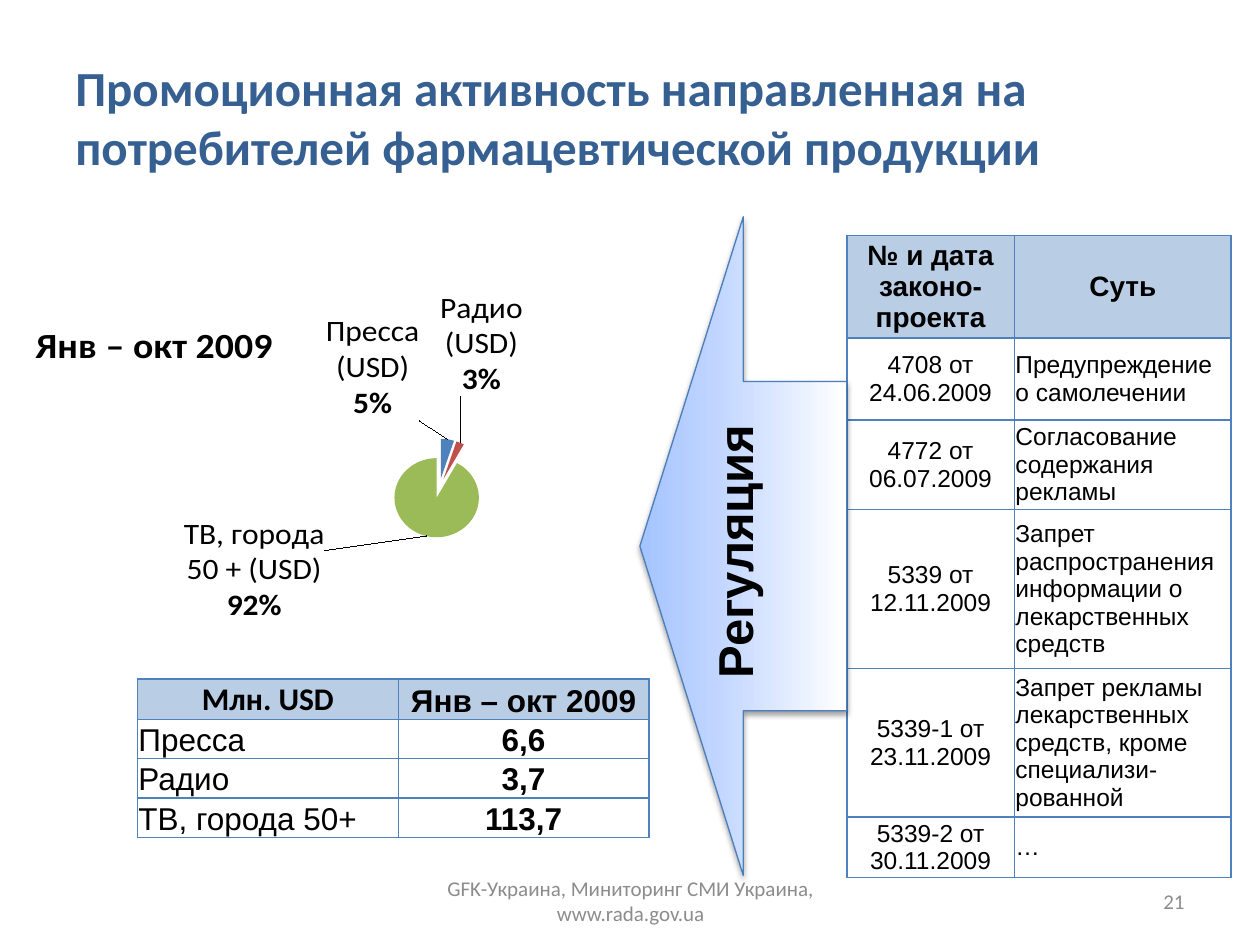
from dataclasses import dataclass

from lxml import etree
from pptx import Presentation
from pptx.chart.data import CategoryChartData
from pptx.dml.color import RGBColor
from pptx.enum.chart import XL_CHART_TYPE, XL_LABEL_POSITION
from pptx.enum.shapes import MSO_SHAPE
from pptx.enum.text import MSO_ANCHOR, PP_ALIGN
from pptx.oxml import parse_xml
from pptx.oxml.ns import nsdecls, qn
from pptx.util import Cm, Pt

LEFT, CENTER, RIGHT = PP_ALIGN.LEFT, PP_ALIGN.CENTER, PP_ALIGN.RIGHT
TOP, MIDDLE, BOTTOM = MSO_ANCHOR.TOP, MSO_ANCHOR.MIDDLE, MSO_ANCHOR.BOTTOM
HEX = {
    "title": "376092", "text": "000000", "note": "8C8C8C",
    "head": "B9CDE5", "border": "4F81BD", "arrow": "4B7EBC",
    "press": "4F81BD", "radio": "C0504D", "tv": "9BBB59",
}
FADE = [(0, "A4C4FF"), (35, "BFD4FF"), (100, "FFFFFF")]


@dataclass
class Label:
    box: tuple
    text: str
    size: int
    color: str
    font: str = "Calibri"
    bold: bool = False
    align: int = LEFT
    anchor: int = MIDDLE
    turn: int = 0


@dataclass
class Slice:
    name: str
    label: str
    value: int
    color: str
    shift: tuple


@dataclass
class Grid:
    left: float
    top: float
    cols: list
    rows: list
    cells: list
    sizes: tuple
    anchor: int
    bold_col: int = -1


LABELS = [
    Label((1.27, 0.76, 22.86, 3.18),
          "Промоционная активность направленная на потребителей "
          "фармацевтической продукции", 28, "title", bold=True),
    Label((8.69, 17.65, 8.05, 1.02),
          "GFK-Украина, Миниторинг СМИ Украина, www.rada.gov.ua",
          12, "note", align=CENTER),
    Label((18.21, 17.65, 5.92, 1.02), "21", 12, "note", align=RIGHT),
]
SIDE = Label((10.64, 10.39, 8.33, 1.45), "Регуляция", 28, "text", "Arial",
             True, CENTER, TOP, 270)
SLICES = [
    Slice("Пресса (USD)", "Пресса (USD)", 5, "press", (-0.16, -0.03)),
    Slice("Радио (USD)", "Радио (USD)", 3, "radio", (-0.03, -0.1)),
    Slice("ТВ города 50 + (USD)", "ТВ, города 50 + (USD)", 92, "tv",
          (-0.13, 0.02)),
]
SPEND = Grid(2.77, 13.69, [5.26, 5.05], [0.81, 0.74, 0.74, 0.74], [
    ("Млн. USD", "Янв – окт 2009"),
    ("Пресса", "6,6"),
    ("Радио", "3,7"),
    ("ТВ, города 50+", "113,7"),
], (18, 18), BOTTOM, bold_col=1)
LAWS = Grid(17.07, 4.75, [3.38, 4.37], [1.96, 1.65, 1.7, 3.2, 2.87, 1.14], [
    ("№ и дата законо-проекта", "Суть"),
    ("4708 от 24.06.2009", "Предупреждение о самолечении"),
    ("4772 от 06.07.2009", "Согласование содержания рекламы"),
    ("5339 от 12.11.2009",
     "Запрет распространения информации о лекарственных средств"),
    ("5339-1 от 23.11.2009",
     "Запрет рекламы лекарственных средств, кроме специализи-рованной"),
    ("5339-2 от 30.11.2009", "…"),
], (16, 14), MIDDLE)


def rgb(key: str) -> RGBColor:
    return RGBColor.from_string(HEX[key])


def style(font, size: float, color: str, name: str, bold: bool) -> None:
    font.size, font.name, font.bold = Pt(size), name, bold
    font.color.rgb = rgb(color)


def add_label(slide, item: Label) -> None:
    box = slide.shapes.add_textbox(*map(Cm, item.box))
    box.rotation = item.turn
    frame = box.text_frame
    frame.text = item.text
    frame.word_wrap = True
    frame.vertical_anchor = item.anchor
    para = frame.paragraphs[0]
    para.alignment = item.align
    style(para.runs[0].font, item.size, item.color, item.font, item.bold)


def place(node, index: int, **parts) -> None:
    """Give a chart part a manual layout, in fractions of the chart."""
    for old in node.findall(qn("c:layout")):
        node.remove(old)
    layout = etree.Element(qn("c:layout"))
    manual = etree.SubElement(layout, qn("c:manualLayout"))
    for tag, val in parts.items():
        etree.SubElement(manual, qn(f"c:{tag}")).set("val", str(val))
    node.insert(index, layout)


def add_pie(slide) -> None:
    data = CategoryChartData(number_format="#,##0")
    data.categories = [s.name for s in SLICES]
    data.add_series("Series 1", [s.value for s in SLICES])
    chart = slide.shapes.add_chart(
        XL_CHART_TYPE.PIE, Cm(0.58), Cm(4.57), Cm(15.47), Cm(8.53), data).chart
    style(chart.font, 18, "text", "Calibri", False)
    chart.has_legend = False
    title = chart.chart_title
    title.text_frame.text = "Янв – окт 2009"
    style(title.text_frame.paragraphs[0].runs[0].font,
          21.6, "text", "Calibri", True)
    root = chart.element.find(qn("c:chart"))
    place(root.find(qn("c:title")), 1, xMode="edge", yMode="edge",
          x=0, y=0.22)
    place(root.find(qn("c:plotArea")), 0, layoutTarget="inner",
          xMode="edge", yMode="edge", x=0.48, y=0.56, w=0.11, h=0.2)

    plot = chart.plots[0]
    plot.vary_by_categories = True
    series = plot.series[0]
    labels = series.data_labels
    labels.show_percentage = labels.show_category_name = True
    labels.show_value = False
    for i, part in enumerate(SLICES):
        point = series.points[i]
        point.format.fill.solid()
        point.format.fill.fore_color.rgb = rgb(part.color)
        frame = point.data_label.text_frame
        frame.text = f"{part.label}\n{part.value}%"
        for para, bold in zip(frame.paragraphs, (False, True)):
            style(para.runs[0].font, 18, "text", "Calibri", bold)
        point.data_label.position = XL_LABEL_POSITION.OUTSIDE_END
    for node, part in zip(series._element.iter(qn("c:dLbl")), SLICES):
        place(node, 1, x=part.shift[0], y=part.shift[1])
    for node in series._element.findall(qn("c:dPt")):
        burst = etree.Element(qn("c:explosion"))
        burst.set("val", "25")
        node.find(qn("c:spPr")).addprevious(burst)


def add_border(cell) -> None:
    props = cell._tc.get_or_add_tcPr()
    for i, side in enumerate(("lnL", "lnR", "lnT", "lnB")):
        props.insert(i, parse_xml(
            f'<a:{side} {nsdecls("a")} w="12700"><a:solidFill>'
            f'<a:srgbClr val="{HEX["border"]}"/></a:solidFill></a:{side}>'))


def add_grid(slide, grid: Grid) -> None:
    table = slide.shapes.add_table(
        len(grid.rows), len(grid.cols), Cm(grid.left), Cm(grid.top),
        Cm(sum(grid.cols)), Cm(sum(grid.rows))).table
    table.first_row = table.horz_banding = False
    for col, width in zip(table.columns, grid.cols):
        col.width = Cm(width)
    for r, (height, texts) in enumerate(zip(grid.rows, grid.cells)):
        table.rows[r].height = Cm(height)
        head = r == 0
        for c, text in enumerate(texts):
            cell = table.cell(r, c)
            cell.text_frame.text = text
            cell.vertical_anchor = grid.anchor
            cell.margin_left = cell.margin_right = cell.margin_top = Cm(0.02)
            cell.margin_bottom = Cm(0.01)
            if head:
                cell.fill.solid()
                cell.fill.fore_color.rgb = rgb("head")
            else:
                cell.fill.background()
            add_border(cell)
            para = cell.text_frame.paragraphs[0]
            key = c == grid.bold_col
            mid = head or key or (grid.bold_col < 0 and c == 0)
            para.alignment = CENTER if mid else LEFT
            name = "Calibri" if text == "Млн. USD" else "Arial"
            style(para.runs[0].font, grid.sizes[0 if head else 1], "text",
                  name, head or key)


def add_arrow(slide) -> None:
    arrow = slide.shapes.add_shape(
        MSO_SHAPE.LEFT_ARROW, Cm(12.9), Cm(4.37), Cm(4.17), Cm(13.28))
    arrow.line.color.rgb = rgb("arrow")
    arrow.line.width = Pt(0.75)
    arrow.shadow.inherit = False
    props = arrow._element.spPr
    stops = "".join(f'<a:gs pos="{pos * 1000}"><a:srgbClr val="{color}"/></a:gs>'
                    for pos, color in FADE)
    props.find(qn("a:prstGeom")).addnext(parse_xml(
        f'<a:gradFill {nsdecls("a")} rotWithShape="1"><a:gsLst>{stops}</a:gsLst>'
        '<a:lin ang="0" scaled="0"/></a:gradFill>'))
    props.find(qn("a:effectLst")).append(parse_xml(
        f'<a:outerShdw {nsdecls("a")} blurRad="{Pt(3.1)}" dist="{Pt(1.6)}" '
        'dir="5400000" rotWithShape="0"><a:srgbClr val="000000">'
        '<a:alpha val="38000"/></a:srgbClr></a:outerShdw>'))


def main() -> None:
    deck = Presentation()
    deck.slide_width, deck.slide_height = Cm(25.4), Cm(19.05)
    slide = deck.slides.add_slide(deck.slide_layouts[6])
    for item in LABELS:
        add_label(slide, item)
    add_pie(slide)
    for grid in (SPEND, LAWS):
        add_grid(slide, grid)
    add_arrow(slide)
    add_label(slide, SIDE)
    deck.save("out.pptx")


if __name__ == "__main__":
    main()
